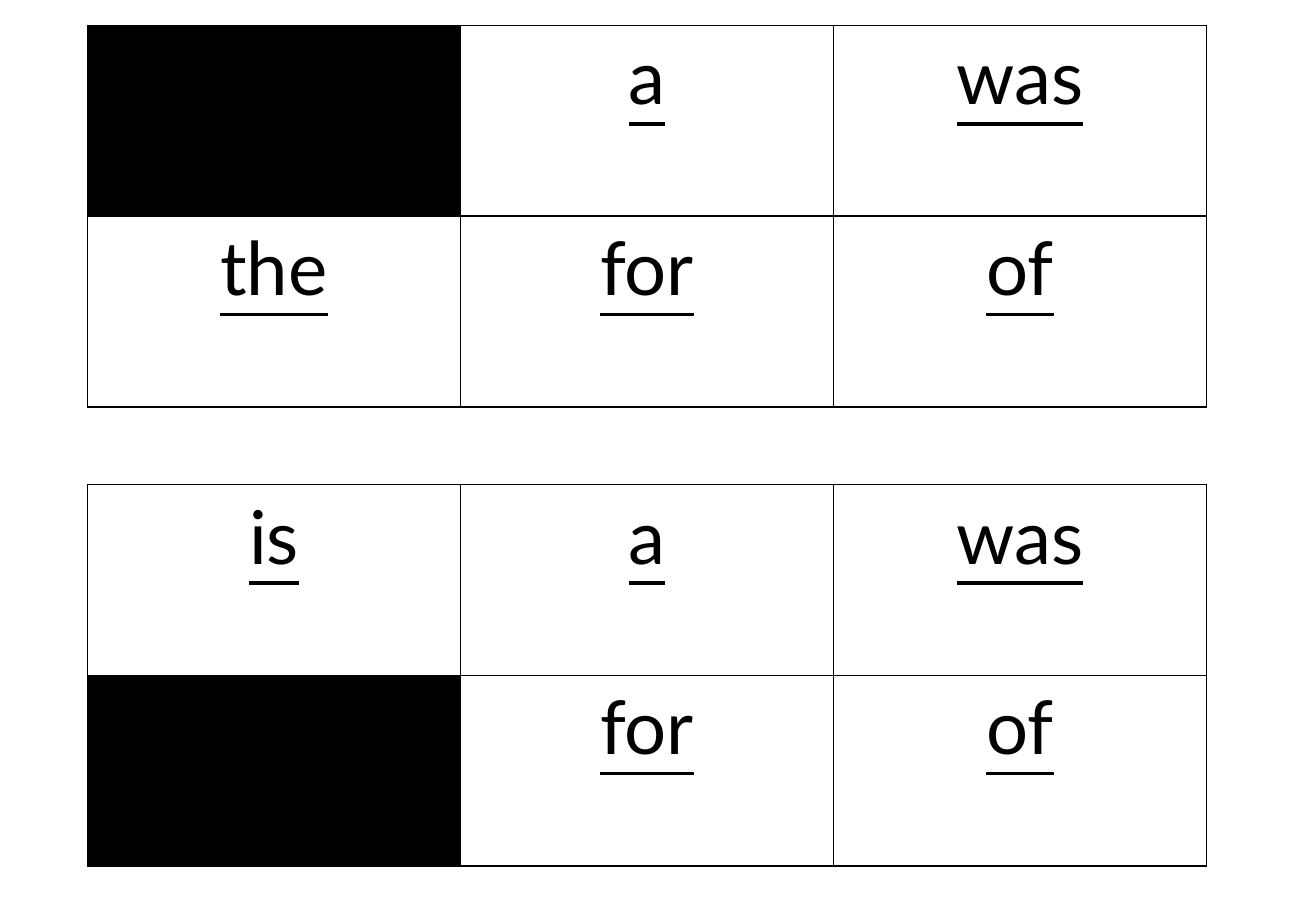
"""Builds a slide with two grids of underlined sight words."""
from lxml import etree
from pptx import Presentation
from pptx.dml.color import RGBColor
from pptx.enum.text import MSO_ANCHOR, PP_ALIGN
from pptx.oxml.ns import qn
from pptx.util import Pt

PX = 9144
SLIDE_WIDTH, SLIDE_HEIGHT = 1083, 750
GRID_LEFT = 72
COLUMN_WIDTH, ROW_HEIGHT = 307, 157
BLACK = RGBColor(0x00, 0x00, 0x00)
WHITE = RGBColor(0xFF, 0xFF, 0xFF)
CENTER = PP_ALIGN.CENTER
TOP = MSO_ANCHOR.TOP
BORDER_WIDTH = Pt(1)
BORDER_SIDES = ("a:lnL", "a:lnR", "a:lnT", "a:lnB")
WORD_FORMAT = {"name": "Lato", "size": Pt(44), "underline": True, "bold": False}
CELL_FORMAT = {
    "margin_left": 11 * PX,
    "margin_right": 11 * PX,
    "margin_top": 5 * PX,
    "margin_bottom": 5 * PX,
    "vertical_anchor": TOP,
}
PLAIN_GRID = {"first_row": False, "horz_banding": False}
WORD_GRIDS = (
    (21, (("", "a", "was"), ("the", "for", "of"))),
    (399, (("is", "a", "was"), ("", "for", "of"))),
)


def set_format(target, values):
    """Set each named attribute on the target."""
    for attribute, value in values.items():
        setattr(target, attribute, value)


def add_borders(cell):
    """Draw a thin black line on all four sides of a cell."""
    properties = cell._tc.get_or_add_tcPr()
    for position, side in enumerate(BORDER_SIDES):
        border = etree.Element(qn(side), w=str(BORDER_WIDTH))
        paint = etree.SubElement(border, qn("a:solidFill"))
        etree.SubElement(paint, qn("a:srgbClr"), val=str(BLACK))
        properties.insert(position, border)


def fill_cell(cell, word):
    """Show a word on white, or a solid black cell when there is none."""
    set_format(cell, CELL_FORMAT)
    cell.fill.solid()
    cell.fill.fore_color.rgb = WHITE if word else BLACK
    add_borders(cell)
    if word:
        line = cell.text_frame.paragraphs[0]
        line.alignment = CENTER
        label = line.add_run()
        label.text = word
        set_format(label.font, WORD_FORMAT)
        label.font.color.rgb = BLACK


def add_word_grid(slide, top, words):
    """Add one grid of equal cells holding the words."""
    row_count, column_count = len(words), len(words[0])
    grid = slide.shapes.add_table(
        row_count, column_count, GRID_LEFT * PX, top * PX,
        column_count * COLUMN_WIDTH * PX, row_count * ROW_HEIGHT * PX,
    ).table
    set_format(grid, PLAIN_GRID)
    for row, row_words in enumerate(words):
        for column, word in enumerate(row_words):
            fill_cell(grid.cell(row, column), word)


def main():
    """Build and save the slide."""
    deck = Presentation()
    deck.slide_width = SLIDE_WIDTH * PX
    deck.slide_height = SLIDE_HEIGHT * PX
    slide = deck.slides.add_slide(deck.slide_layouts[6])
    for top, words in WORD_GRIDS:
        add_word_grid(slide, top, words)
    deck.save("out.pptx")


if __name__ == "__main__":
    main()
